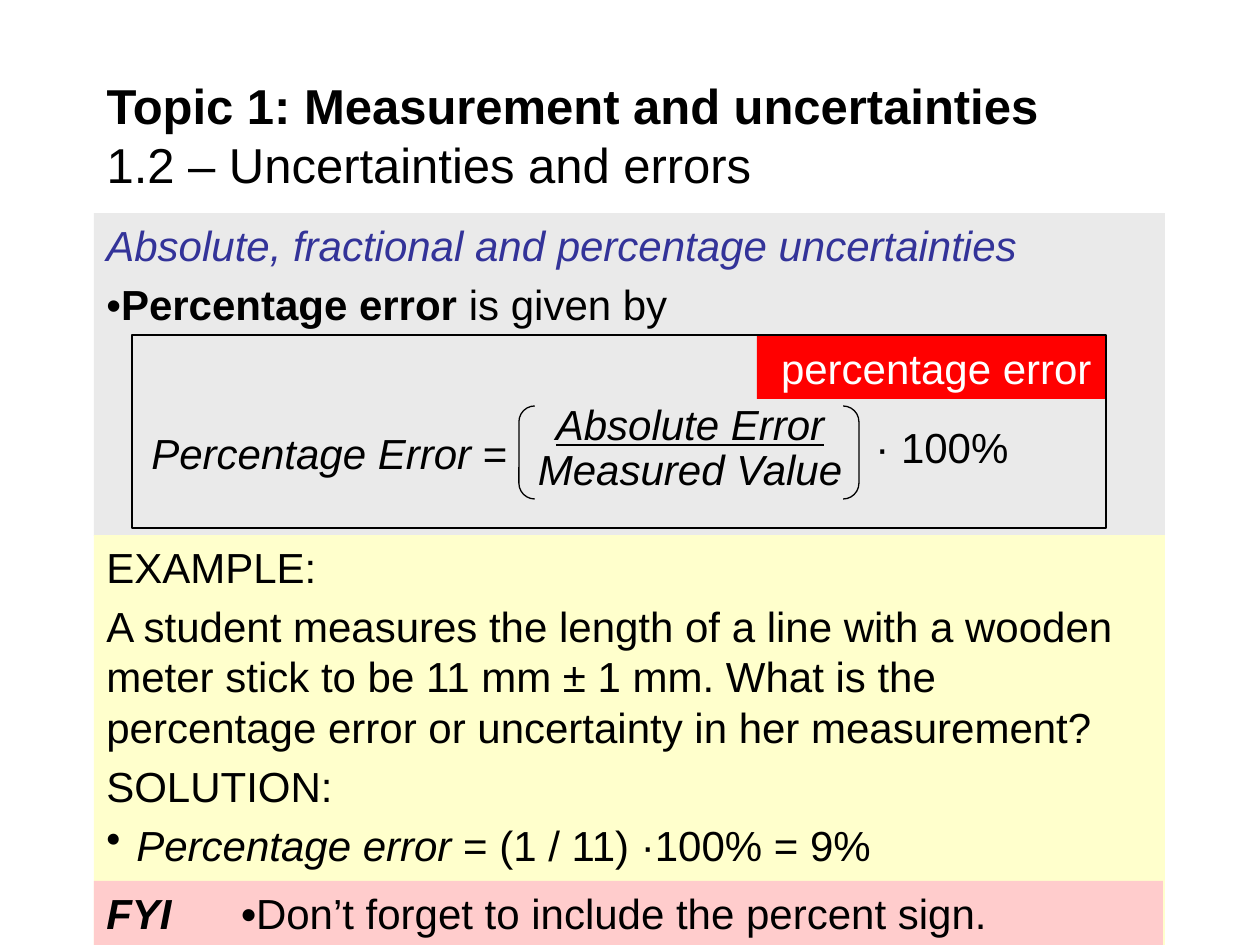
from lxml import etree
from pptx import Presentation
from pptx import util as u
from pptx.dml.color import RGBColor
from pptx.enum import shapes, text
from pptx.oxml import ns

PX_PER_INCH = 126
BLACK = RGBColor(0x00, 0x00, 0x00)
WHITE = RGBColor(0xFF, 0xFF, 0xFF)
INDIGO = RGBColor(0x33, 0x33, 0x99)
RED = RGBColor(0xFF, 0x00, 0x00)
GREY = RGBColor(0xEA, 0xEA, 0xEA)
YELLOW = RGBColor(0xFF, 0xFF, 0xCC)
PINK = RGBColor(0xFF, 0xCC, 0xCC)
GAP = 5  # points before a paragraph
LEFT, WIDTH = 94, 1071


def px(n):
    return u.Emu(round(n * 914400 / PX_PER_INCH))


def box(*lengths):
    return [px(n) for n in lengths]


def add_run(p, words, style="", size=24, color=BLACK):
    """Style holds any of the letters b (bold), i (italic) and u (underline)."""
    r = p.add_run()
    r.text = words
    font = r.font
    font.name, font.size = "Arial", u.Pt(size)
    font.bold, font.italic, font.underline = (c in style for c in "biu")
    font.color.rgb = color


def write(tf, paragraphs, before=0, spacing=None, align=text.PP_ALIGN.LEFT,
          color=BLACK):
    """Each paragraph is a list of (words, style) runs."""
    tf.word_wrap = True
    tf.vertical_anchor = text.MSO_ANCHOR.TOP
    for i, runs in enumerate(paragraphs):
        p = tf.add_paragraph() if i else tf.paragraphs[0]
        p.alignment = align
        p.space_before = u.Pt(before)
        p.line_spacing = spacing
        for words, style in runs:
            add_run(p, words, style, color=color)


def add_bullet(p, hang):
    pPr = p._p.get_or_add_pPr()
    pPr.set("marL", str(px(hang)))
    pPr.set("indent", str(-px(hang)))
    etree.SubElement(pPr, ns.qn("a:buChar"), char="•")


def add_tab_stop(p, pos):
    tabs = etree.SubElement(p._p.get_or_add_pPr(), ns.qn("a:tabLst"))
    etree.SubElement(tabs, ns.qn("a:tab"), pos=str(px(pos)), algn="l")


def add_panel(s, place, fill):
    sp = s.shapes.add_shape(shapes.MSO_SHAPE.RECTANGLE, *box(*place))
    sp.shadow.inherit = False
    sp.fill.solid()
    sp.fill.fore_color.rgb = fill
    sp.line.fill.background()
    return sp.text_frame


def add_outline(s, kind, place, width):
    sp = s.shapes.add_shape(kind, *box(*place))
    sp.shadow.inherit = False
    sp.fill.background()
    sp.line.color.rgb = BLACK
    sp.line.width = u.Pt(width)
    return sp


def add_label(s, place, paragraphs, **layout):
    sp = s.shapes.add_textbox(*box(*place))
    write(sp.text_frame, paragraphs, spacing=0.9, **layout)


def add_title(s):
    sp = s.shapes.title
    sp.left, sp.top, sp.width, sp.height = box(LEFT, 73, WIDTH, 123)
    tf = sp.text_frame
    tf.auto_size = text.MSO_AUTO_SIZE.NONE
    tf.vertical_anchor = text.MSO_ANCHOR.MIDDLE
    p = tf.paragraphs[0]
    p.alignment = text.PP_ALIGN.LEFT
    add_run(p, "Topic 1: Measurement and uncertainties", "b", 28)
    p.add_line_break()
    add_run(p, "1.2 – Uncertainties and errors", size=28)


def add_definition(s):
    tf = add_panel(s, (LEFT, 213, WIDTH, 323), GREY)
    write(tf, [[("Absolute, fractional and percentage uncertainties", "i")],
               [("•", ""), ("Percentage error", "b"), (" is given by", "")]])
    heading, rule = tf.paragraphs
    heading.runs[0].font.color.rgb = INDIGO
    rule.space_before = u.Pt(GAP)


def add_example(s):
    tf = add_panel(s, (LEFT, 535, WIDTH, 410), YELLOW)
    write(tf, [
        [("EXAMPLE:", "")],
        [("A student measures the length of a line with a wooden meter stick "
          "to be 11 mm ± 1 mm. What is the percentage error or uncertainty "
          "in her measurement?", "")],
        [("SOLUTION:", "")],
        [("Percentage error", "i"), (" = (1 / 11) ·100% = 9%", "")],
    ], before=GAP)
    add_bullet(tf.paragraphs[-1], 30)


def add_formula(s):
    add_label(s, (139, 427, 461, 45),
              [[("Percentage Error", "i"), (" =", "")]])
    add_label(s, (522, 398, 336, 88),
              [[("Absolute Error", "iu")], [("Measured Value", "i")]],
              align=text.PP_ALIGN.CENTER)
    tf = add_panel(s, (757, 336, 348, 63), RED)
    write(tf, [[(" percentage error", "")]], color=WHITE)
    tf.word_wrap = False
    add_outline(s, shapes.MSO_SHAPE.RECTANGLE, (132, 335, 974, 193), 1)
    brackets = add_outline(s, shapes.MSO_SHAPE.DOUBLE_BRACKET,
                           (519, 406, 340, 93), 0.75)
    brackets.adjustments[0] = 0.17
    add_label(s, (863, 421, 180, 53), [[("· 100%", "")]])


def add_reminder(s):
    tf = add_panel(s, (LEFT, 881, 1069, 64), PINK)
    write(tf, [[("FYI\t", "bi"), ("•", "b"),
                ("Don’t forget to include the percent sign.", "")]],
          before=GAP)
    add_tab_stop(tf.paragraphs[0], 135)


def main():
    prs = Presentation()
    prs.slide_width, prs.slide_height = box(1260, 945)
    s = prs.slides.add_slide(prs.slide_layouts.get_by_name("Title Only"))
    add_title(s)
    add_definition(s)
    add_example(s)
    add_formula(s)
    add_reminder(s)
    prs.save("out.pptx")


if __name__ == "__main__":
    main()
